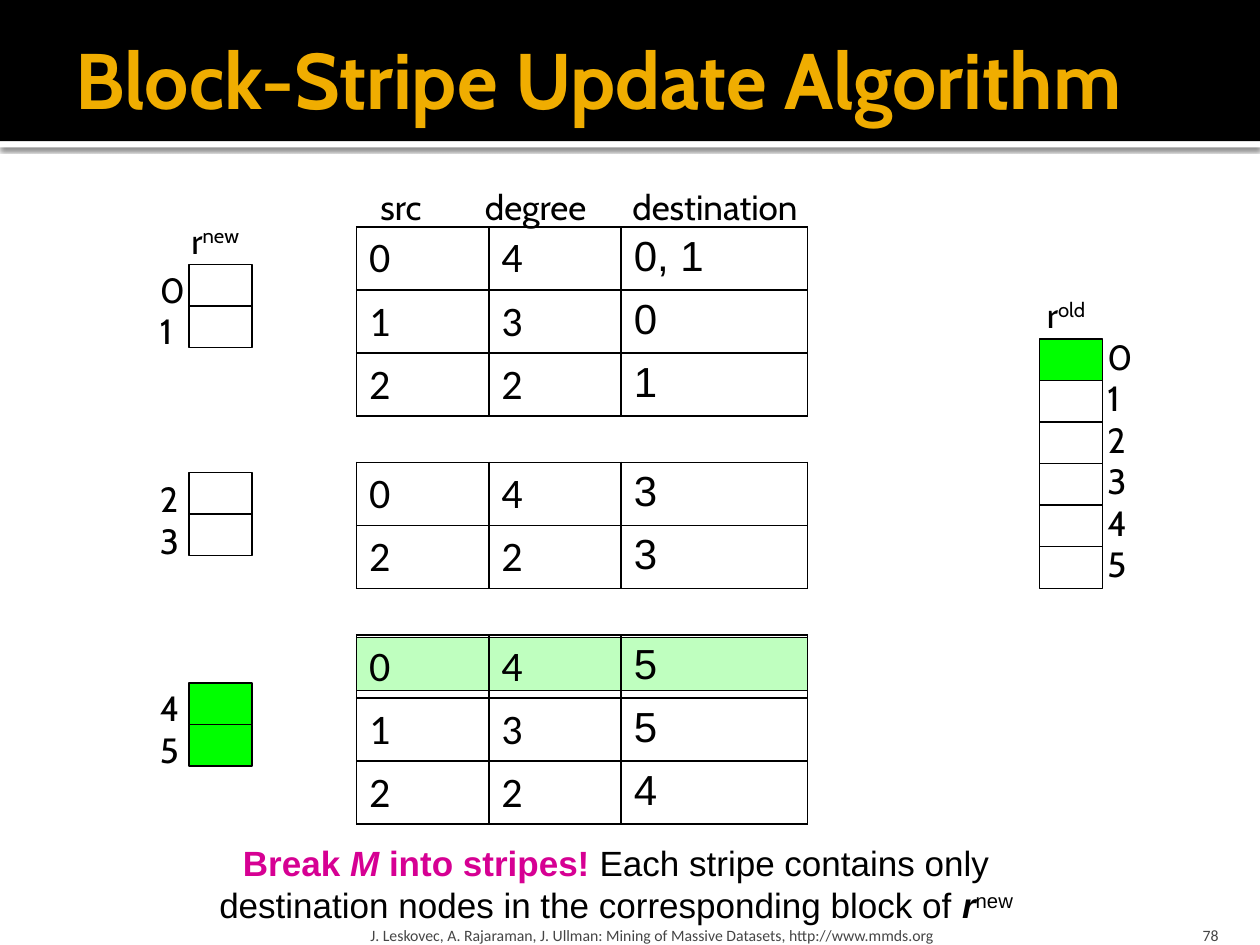
from dataclasses import dataclass

from lxml import etree
from pptx import Presentation
from pptx.dml.color import RGBColor
from pptx.enum.shapes import MSO_SHAPE
from pptx.enum.text import MSO_ANCHOR, MSO_AUTO_SIZE, PP_ALIGN
from pptx.oxml import parse_xml
from pptx.oxml.ns import nsdecls, qn
from pptx.util import Inches, Pt

RECT = MSO_SHAPE.RECTANGLE
LEFT, CENTER, RIGHT = PP_ALIGN.LEFT, PP_ALIGN.CENTER, PP_ALIGN.RIGHT
MIDDLE, BOTTOM = MSO_ANCHOR.MIDDLE, MSO_ANCHOR.BOTTOM
GROW, FIXED = MSO_AUTO_SIZE.SHAPE_TO_FIT_TEXT, MSO_AUTO_SIZE.NONE

BLACK, WHITE, GREEN = "000000", "FFFFFF", "00FF00"
GOLD, PINK, GRAY = "F0AD00", "D60093", "454545"
STEP = 0.33
CELL_W = 0.5
GRID_X = 2.83
COLS = (1.05, 1.05, 1.48)


@dataclass
class Span:
    text: str
    color: str = BLACK
    bold: bool = False
    italic: bool = False
    raised: bool = False


@dataclass
class Block:
    """A column of vector cells with an index beside each one."""
    x: float
    y: float
    label_x: float
    label_y: float
    first: int
    fills: tuple


@dataclass
class Stripe:
    y: float
    rows: tuple


BLOCKS = (
    Block(1.5, 2.1, 1.17, 2.08, 0, (None, None)),
    Block(1.5, 3.75, 1.17, 3.74, 2, (None, None)),
    Block(1.5, 5.42, 1.17, 5.4, 4, (GREEN, GREEN)),
    Block(8.25, 2.69, 8.69, 2.61, 0, (GREEN,) + (None,) * 5),
)
STRIPES = (
    Stripe(1.8, (("0", "4", "0, 1"), ("1", "3", "0"), ("2", "2", "1"))),
    Stripe(5.04, (("0", "4", "5"), ("1", "3", "5"), ("2", "2", "4"))),
    Stripe(3.67, (("0", "4", "3"), ("2", "2", "3"))),
)
HEADS = (("src", 2.92, 0.57), ("degree", 3.75, 1.07),
         ("destination", 4.92, 1.55))
VECTORS = (("new", 1.42, 1.69, 0.62), ("old", 8.21, 2.28, 0.53))
CAPTION = (
    Span("Break ", PINK, bold=True),
    Span("M", PINK, bold=True, italic=True),
    Span(" into stripes! ", PINK, bold=True),
    Span("Each stripe contains only destination nodes in the "
         "corresponding block of "),
    Span("r", bold=True, italic=True),
    Span("new", raised=True),
)


def rgb(code: str) -> RGBColor:
    return RGBColor.from_string(code)


def style(font, name: str, size: float, color: str, bold=False, italic=False):
    font.name, font.size = name, Pt(size)
    font.bold, font.italic = bold, italic
    font.color.rgb = rgb(color)


def add_rect(slide, x, y, w, h, fill=None, line=None):
    shape = slide.shapes.add_shape(RECT, *map(Inches, (x, y, w, h)))
    shape.shadow.inherit = False
    if fill:
        shape.fill.solid()
        shape.fill.fore_color.rgb = rgb(fill)
    else:
        shape.fill.background()
    if line:
        shape.line.color.rgb = rgb(line)
        shape.line.width = Pt(0.75)
    else:
        shape.line.fill.background()
    return shape


def add_text(slide, x, y, w, h, spans, font="Cabin", size=20, align=LEFT,
             wrap=False):
    box = slide.shapes.add_textbox(*map(Inches, (x, y, w, h)))
    frame = box.text_frame
    frame.word_wrap, frame.auto_size = wrap, GROW
    para = frame.paragraphs[0]
    para.alignment = align
    for span in spans:
        run = para.add_run()
        run.text = span.text
        style(run.font, font, size, span.color, span.bold, span.italic)
        if span.raised:
            run._r.get_or_add_rPr().set("baseline", "30000")
    return box


def add_note(slide, x, w, text, align, inset):
    """Small gray line at the foot of the slide."""
    box = add_text(slide, x, 7.2, w, 0.3, [Span(text, GRAY)], "Calibri", 9,
                   align, wrap=True)
    frame = box.text_frame
    frame.auto_size, frame.vertical_anchor = FIXED, BOTTOM
    frame.margin_left = frame.margin_right = Inches(inset)
    frame.margin_bottom = 0


def add_header(slide):
    strip = add_rect(slide, 0, 1.12, 10, 0.05, WHITE)
    effects = strip.element.spPr.find(qn("a:effectLst"))
    effects.append(parse_xml(
        f'<a:outerShdw {nsdecls("a")} blurRad="{Pt(2.5)}" dist="{Pt(0.8)}" '
        'dir="5400000" algn="t" rotWithShape="0"><a:srgbClr val="000000">'
        '<a:alpha val="60000"/></a:srgbClr></a:outerShdw>'))
    band = add_rect(slide, 0, 0, 10, 1.12, BLACK)

    title = slide.shapes.title
    band.element.addnext(title.element)
    title.left, title.top = Inches(0.5), Inches(0.08)
    title.width, title.height = Inches(9), Inches(1.08)
    frame = title.text_frame
    frame.text = "Block-Stripe Update Algorithm"
    frame.auto_size, frame.vertical_anchor = FIXED, MIDDLE
    frame.margin_left, frame.margin_right = Inches(0.1), Inches(0.05)
    para = frame.paragraphs[0]
    para.alignment = LEFT
    style(para.runs[0].font, "Cabin", 45, GOLD, bold=True)


def add_borders(cell):
    props = cell._tc.get_or_add_tcPr()
    for spot, side in enumerate(("lnL", "lnR", "lnT", "lnB")):
        line = etree.Element(qn(f"a:{side}"), w=str(Pt(1)))
        fill = etree.SubElement(line, qn("a:solidFill"))
        etree.SubElement(fill, qn("a:srgbClr"), val=BLACK)
        props.insert(spot, line)


def add_stripe(slide, stripe: Stripe):
    count = len(stripe.rows)
    frame = slide.shapes.add_table(count, len(COLS), Inches(GRID_X),
                                   Inches(stripe.y), Inches(sum(COLS)),
                                   Inches(count * 0.5))
    table = frame.table
    table.first_row = table.horz_banding = False
    for col, width in zip(table.columns, COLS):
        col.width = Inches(width)
    for r, row in enumerate(stripe.rows):
        for c, text in enumerate(row):
            cell = table.cell(r, c)
            cell.text = text
            cell.fill.background()
            add_borders(cell)
            font = "Arial" if c == 2 else "Calibri"
            run = cell.text_frame.paragraphs[0].runs[0]
            style(run.font, font, 24, BLACK)


def add_block(slide, block: Block):
    for i, fill in enumerate(block.fills):
        add_rect(slide, block.x, block.y + i * STEP, CELL_W, STEP, fill, BLACK)
        add_text(slide, block.label_x, block.label_y + i * STEP, 0.36, 0.43,
                 [Span(str(block.first + i))])


def main():
    deck = Presentation()
    deck.slide_width, deck.slide_height = Inches(10), Inches(7.5)
    slide = deck.slides.add_slide(deck.slide_layouts[5])
    add_header(slide)

    glow = add_rect(slide, GRID_X, 5.06, sum(COLS), 0.42, GREEN, BLACK)
    tint = glow.element.spPr.find(qn("a:solidFill"))[0]
    etree.SubElement(tint, qn("a:alpha"), val="25000")

    for block in BLOCKS:
        add_block(slide, block)
    for text, x, w in HEADS:
        add_text(slide, x, 1.42, w, 0.43, [Span(text)])
    for mark, x, y, w in VECTORS:
        add_text(slide, x, y, w, 0.43, [Span("r"), Span(mark, raised=True)])
    for stripe in STRIPES:
        add_stripe(slide, stripe)

    add_text(slide, 1.25, 6.63, 7.28, 0.77, CAPTION, "Arial", align=CENTER,
             wrap=True)
    add_note(slide, 2.89, 6.02, "J. Leskovec, A. Rajaraman, J. Ullman: Mining "
             "of Massive Datasets, http://www.mmds.org", LEFT, 0.05)
    add_note(slide, 8.97, 0.8, "78", RIGHT, 0.1)
    deck.save("out.pptx")


if __name__ == "__main__":
    main()
